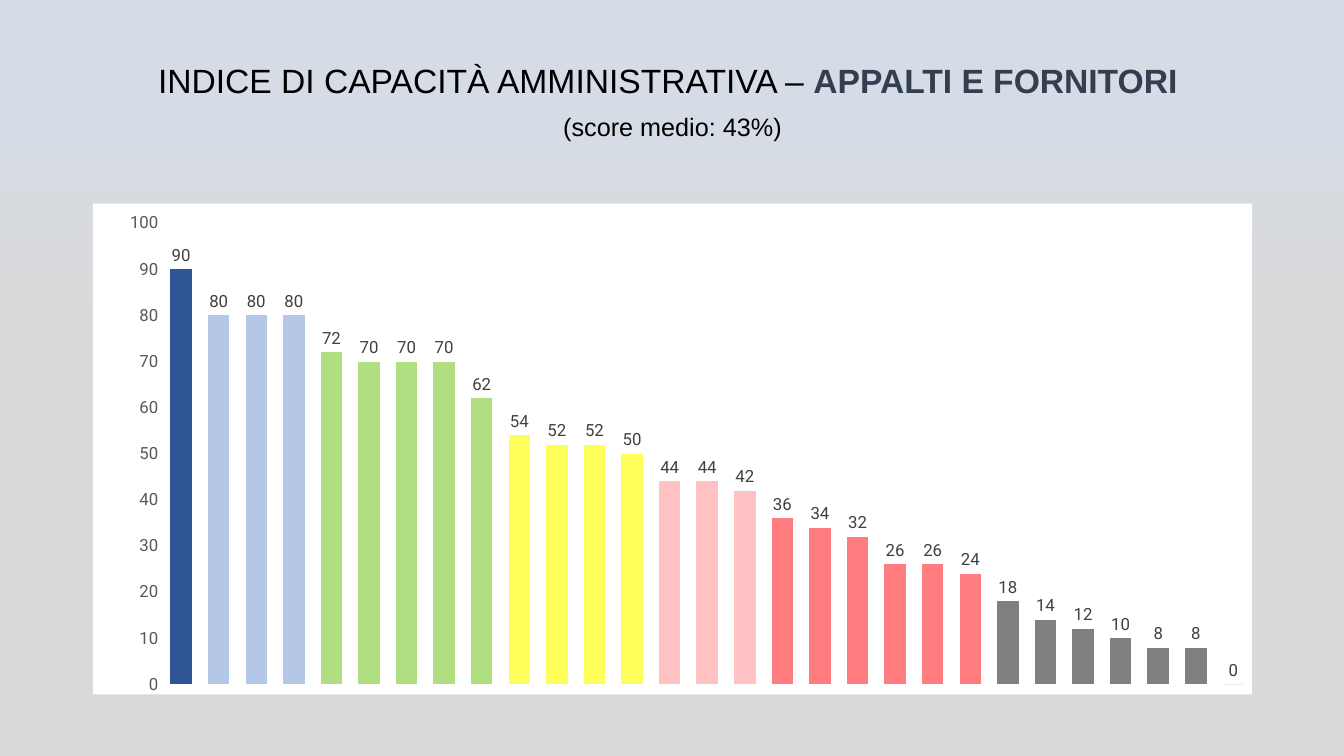
"""Build the slide on the administrative capacity index for procurement and suppliers."""
from dataclasses import dataclass
from copy import deepcopy

from pptx import Presentation
from pptx.chart.data import CategoryChartData
from pptx.dml.color import RGBColor
from pptx.enum.chart import XL_CHART_TYPE, XL_LABEL_POSITION, XL_TICK_MARK
from pptx.enum.text import MSO_ANCHOR, PP_ALIGN
from pptx.oxml import parse_xml
from pptx.oxml.ns import nsdecls, qn
from pptx.util import Inches, Pt

BLACK = RGBColor(0x00, 0x00, 0x00)
SLATE = RGBColor(0x33, 0x3F, 0x50)
AXIS_GREY = RGBColor(0x59, 0x59, 0x59)
LABEL_GREY = RGBColor(0x40, 0x40, 0x40)
SKY = RGBColor(0xD6, 0xDC, 0xE5)
MIST = RGBColor(0xD9, 0xD9, 0xD9)
NAVY = RGBColor(0x2F, 0x55, 0x97)
LIGHT_BLUE = RGBColor(0xB4, 0xC7, 0xE7)
GREEN = RGBColor(0xB2, 0xDE, 0x82)
YELLOW = RGBColor(0xFF, 0xFF, 0x5B)
PINK = RGBColor(0xFF, 0xC1, 0xC1)
RED = RGBColor(0xFF, 0x7C, 0x80)
GREY = RGBColor(0x80, 0x80, 0x80)
DARK_GREY = RGBColor(0x76, 0x71, 0x71)


@dataclass(frozen=True)
class Band:
    color: RGBColor
    scores: tuple[int, ...]


BANDS = (
    Band(NAVY, (90,)),
    Band(LIGHT_BLUE, (80, 80, 80)),
    Band(GREEN, (72, 70, 70, 70, 62)),
    Band(YELLOW, (54, 52, 52, 50)),
    Band(PINK, (44, 44, 42)),
    Band(RED, (36, 34, 32, 26, 26, 24)),
    Band(GREY, (18, 14, 12, 10, 8, 8)),
    Band(DARK_GREY, (0,)),
)
PLOT_LAYOUT = {"x": 0.06, "y": 0.04, "w": 0.94, "h": 0.94}


def style_font(font, *, size: int, color: RGBColor, name: str = "Roboto", bold: bool = False) -> None:
    font.name = name
    font.size = Pt(size)
    font.bold = bold
    font.color.rgb = color


def add_text(paragraph, text: str, *, size: int, color: RGBColor = BLACK, bold: bool = False) -> None:
    run = paragraph.add_run()
    run.text = text
    style_font(run.font, size=size, color=color, name="Arial", bold=bold)


def paint_background(slide) -> None:
    fill = slide.background.fill
    fill.gradient()
    fill.gradient_angle = 270
    for stop, color, position in zip(fill.gradient_stops, (SKY, MIST), (0, 0.45)):
        stop.color.rgb = color
        stop.position = position
    first_stop = slide.element.find(".//" + qn("a:gs"))
    held_stop = deepcopy(first_stop)
    held_stop.set("pos", "15000")
    first_stop.addnext(held_stop)


def add_heading(slide) -> None:
    frame = slide.shapes.add_textbox(Inches(0.92), Inches(0.2), Inches(11.5), Inches(1.65)).text_frame
    frame.word_wrap = True
    frame.vertical_anchor = MSO_ANCHOR.MIDDLE
    title, subtitle = frame.paragraphs[0], frame.add_paragraph()
    for paragraph in (title, subtitle):
        paragraph.alignment = PP_ALIGN.CENTER
        paragraph.line_spacing = 0.9
        paragraph.space_after = Pt(10)
    add_text(title, "INDICE DI CAPACITÀ AMMINISTRATIVA – ", size=24)
    add_text(title, "APPALTI E FORNITORI ", size=24, color=SLATE, bold=True)
    add_text(subtitle, "(score medio: 43%)", size=18)


def frame_chart(chart) -> None:
    chart_space = chart.element
    chart_space.find(qn("c:chart")).addnext(parse_xml(
        f'<c:spPr {nsdecls("c", "a")}><a:solidFill><a:srgbClr val="FFFFFF"/></a:solidFill>'
        "<a:ln><a:noFill/></a:ln></c:spPr>"))
    plot_area = chart_space.find(".//" + qn("c:plotArea"))
    for layout in plot_area.findall(qn("c:layout")):
        plot_area.remove(layout)
    modes = "".join(f'<c:{side}Mode val="edge"/>' for side in "xy")
    extents = "".join(f'<c:{side} val="{share}"/>' for side, share in PLOT_LAYOUT.items())
    plot_area.insert(0, parse_xml(
        f'<c:layout {nsdecls("c")}><c:manualLayout><c:layoutTarget val="inner"/>'
        f"{modes}{extents}</c:manualLayout></c:layout>"))


def add_score_chart(slide) -> None:
    bars = [(score, band.color) for band in BANDS for score in band.scores]
    data = CategoryChartData()
    data.categories = [str(rank) for rank in range(1, len(bars) + 1)]
    data.add_series("Series 1", [score for score, _ in bars])
    chart = slide.shapes.add_chart(
        XL_CHART_TYPE.COLUMN_CLUSTERED, Inches(0.92), Inches(2.02), Inches(11.5), Inches(4.87), data).chart
    chart.has_legend = False
    chart.has_title = False
    style_font(chart.font, size=12, color=BLACK)
    frame_chart(chart)

    chart.category_axis.visible = False
    scale = chart.value_axis
    scale.minimum_scale, scale.maximum_scale, scale.major_unit = 0, 100, 10
    scale.has_major_gridlines = False
    scale.major_tick_mark = XL_TICK_MARK.NONE
    scale.format.line.fill.background()
    style_font(scale.tick_labels.font, size=12, color=AXIS_GREY)

    plot = chart.plots[0]
    plot.gap_width = 75
    plot.vary_by_categories = False
    scores = plot.series[0]
    scores.format.fill.solid()
    scores.format.fill.fore_color.rgb = GREEN
    for index, (_, color) in enumerate(bars):
        if color != GREEN:
            fill = scores.points[index].format.fill
            fill.solid()
            fill.fore_color.rgb = color
    labels = scores.data_labels
    labels.show_value = True
    labels.position = XL_LABEL_POSITION.OUTSIDE_END
    style_font(labels.font, size=12, color=LABEL_GREY)


def main() -> None:
    presentation = Presentation()
    presentation.slide_width = Inches(13.33)
    presentation.slide_height = Inches(7.5)
    slide = presentation.slides.add_slide(presentation.slide_layouts[6])
    paint_background(slide)
    add_score_chart(slide)
    add_heading(slide)
    presentation.save("out.pptx")


if __name__ == "__main__":
    main()
